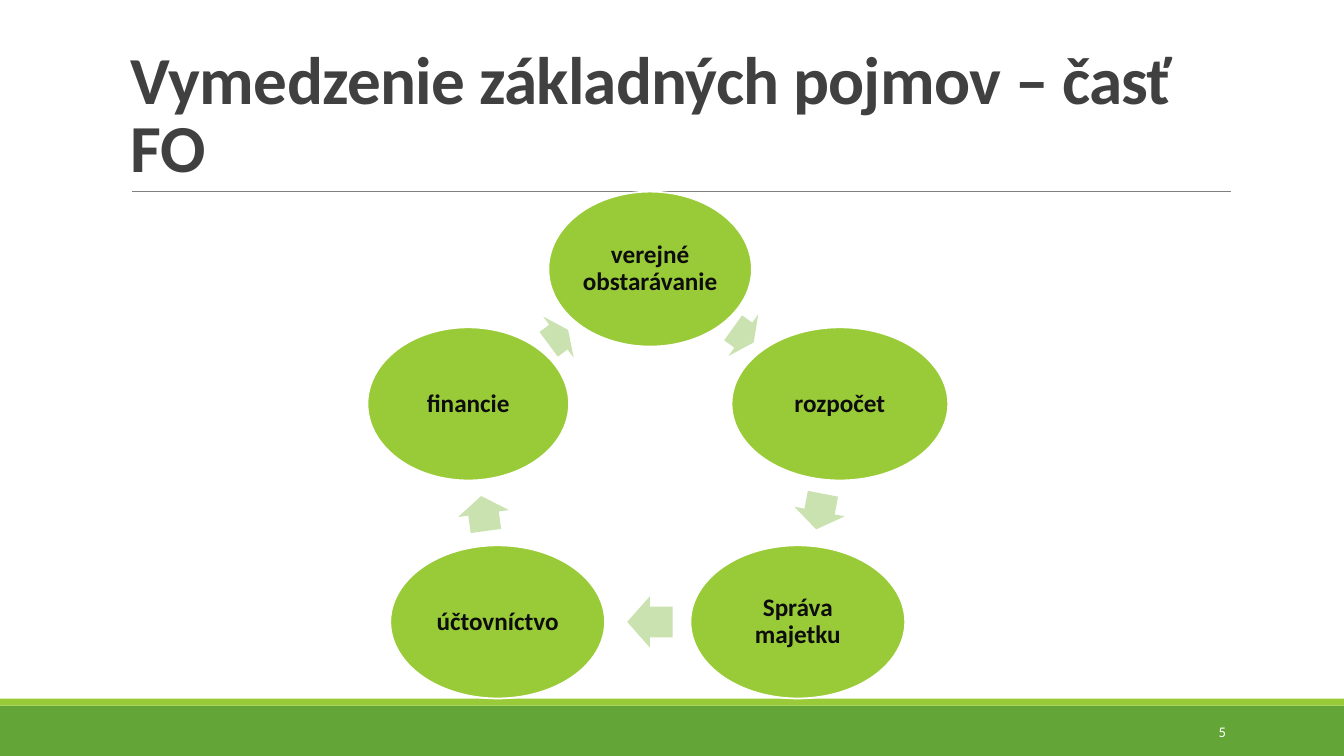
from pptx import Presentation
from pptx.dml.color import RGBColor
from pptx.enum.shapes import MSO_CONNECTOR as LineKind, MSO_SHAPE as Preset
from pptx.enum.text import MSO_ANCHOR as Anchor, PP_ALIGN as Align
from pptx.oxml.ns import qn
from pptx.oxml.xmlchemy import OxmlElement
from pptx.util import Pt

WHITE = RGBColor(0xFF, 0xFF, 0xFF)
LIME = RGBColor(0x99, 0xCB, 0x38)
GREEN = RGBColor(0x63, 0xA5, 0x37)
PALE = RGBColor(0xCA, 0xE2, 0xAF)
GREY = RGBColor(0x80, 0x80, 0x80)
DARK = RGBColor(0x40, 0x40, 0x40)
BLACK = RGBColor(0x0D, 0x0D, 0x0D)

WIDTH, HEIGHT = 960, 540
TITLE = "Vymedzenie základných pojmov – časť FO"
PAGE_NUMBER = "5"
BANDS = [(504, 36, GREEN), (499, 5, LIME)]
RULE = (94.3, 879.1, 136.8)

# name, centre x, centre y, width, height


TOPICS = [
    ("verejné obstarávanie", 464.4, 192.2, 145.4, 110.7),
    ("rozpočet", 599.9, 288.5, 154.8, 109.4),
    ("Správa majetku", 569.9, 444.2, 153.4, 109.4),
    ("účtovníctvo", 355.5, 444.2, 153.4, 109.4),
    ("financie", 334.5, 288.5, 144, 109.4),
]
ARROW_HEIGHT = 36.6
ARROWS = [
    (531, 239.4, 18, 35.5),
    (585.4, 365.4, 25.9, 100.8),
    (464.2, 444.2, 32.4, 180),
    (345.4, 366.8, 25.2, 262.2),
    (398.9, 240.8, 17.3, 323.5),
]

TITLE_FONT = {"name": "Calibri", "size": Pt(48), "bold": True}
NUMBER_FONT = {"name": "Calibri", "size": Pt(10.5)}
TOPIC_FONT = {"name": "Calibri", "size": Pt(18), "bold": True}
MARGINS = ("margin_left", "margin_right", "margin_top", "margin_bottom")
TOPIC_FRAME = {name: Pt(2.2) for name in MARGINS}


def apply(target, values):
    for name, value in values.items():
        setattr(target, name, value)


def write(box, text, font, color, anchor, para_format, frame_format=None):
    frame = box.text_frame
    apply(frame, {"word_wrap": True, "vertical_anchor": anchor, **(frame_format or {})})
    para = frame.paragraphs[0]
    apply(para, para_format)
    span = para.add_run()
    span.text = text
    apply(span.font, font)
    span.font.color.rgb = color


def add_filled(page, preset, left, top, width, height, color):
    shape = page.shapes.add_shape(preset, Pt(left), Pt(top), Pt(width), Pt(height))
    shape.shadow.inherit = False
    shape.fill.solid()
    shape.fill.fore_color.rgb = color
    shape.line.fill.background()
    return shape


def add_centred(page, preset, x, y, width, height, color):
    return add_filled(page, preset, x - width / 2, y - height / 2, width, height, color)


def add_frame(page):
    for top, height, color in BANDS:
        add_filled(page, Preset.RECTANGLE, 0, top, WIDTH, height, color)
    start, end, level = RULE
    rule = page.shapes.add_connector(
        LineKind.STRAIGHT, Pt(start), Pt(level), Pt(end), Pt(level))
    rule.line.color.rgb = GREY
    rule.line.width = Pt(0.5)
    rule.element.spPr.append(OxmlElement("a:effectLst"))

    title = page.shapes.add_textbox(Pt(86.4), Pt(22.3), Pt(792), Pt(114.5))
    write(title, TITLE, TITLE_FONT, DARK, Anchor.BOTTOM, {"line_spacing": 0.85})
    for properties in title.element.iter(qn("a:rPr")):
        properties.set("spc", "-50")

    number = page.shapes.add_textbox(Pt(779.8), Pt(508.3), Pt(103), Pt(28.8))
    write(number, PAGE_NUMBER, NUMBER_FONT, WHITE, Anchor.MIDDLE,
          {"alignment": Align.RIGHT})


def add_cycle(page):
    for (name, x, y, width, height), (arrow_x, arrow_y, length, angle) in zip(TOPICS, ARROWS):
        topic = add_centred(page, Preset.OVAL, x, y, width, height, LIME)
        topic.line.color.rgb = WHITE
        topic.line.width = Pt(1.25)
        write(topic, name, TOPIC_FONT, BLACK, Anchor.MIDDLE,
              {"alignment": Align.CENTER, "line_spacing": 0.9}, TOPIC_FRAME)
        arrow = add_centred(
            page, Preset.RIGHT_ARROW, arrow_x, arrow_y, length, ARROW_HEIGHT, PALE)
        arrow.adjustments[0] = 0.6
        arrow.adjustments[1] = 0.5
        arrow.rotation = angle


def main():
    deck = Presentation()
    apply(deck, {"slide_width": Pt(WIDTH), "slide_height": Pt(HEIGHT)})
    page = deck.slides.add_slide(deck.slide_layouts[6])
    add_frame(page)
    add_cycle(page)
    deck.save("out.pptx")


if __name__ == "__main__":
    main()
